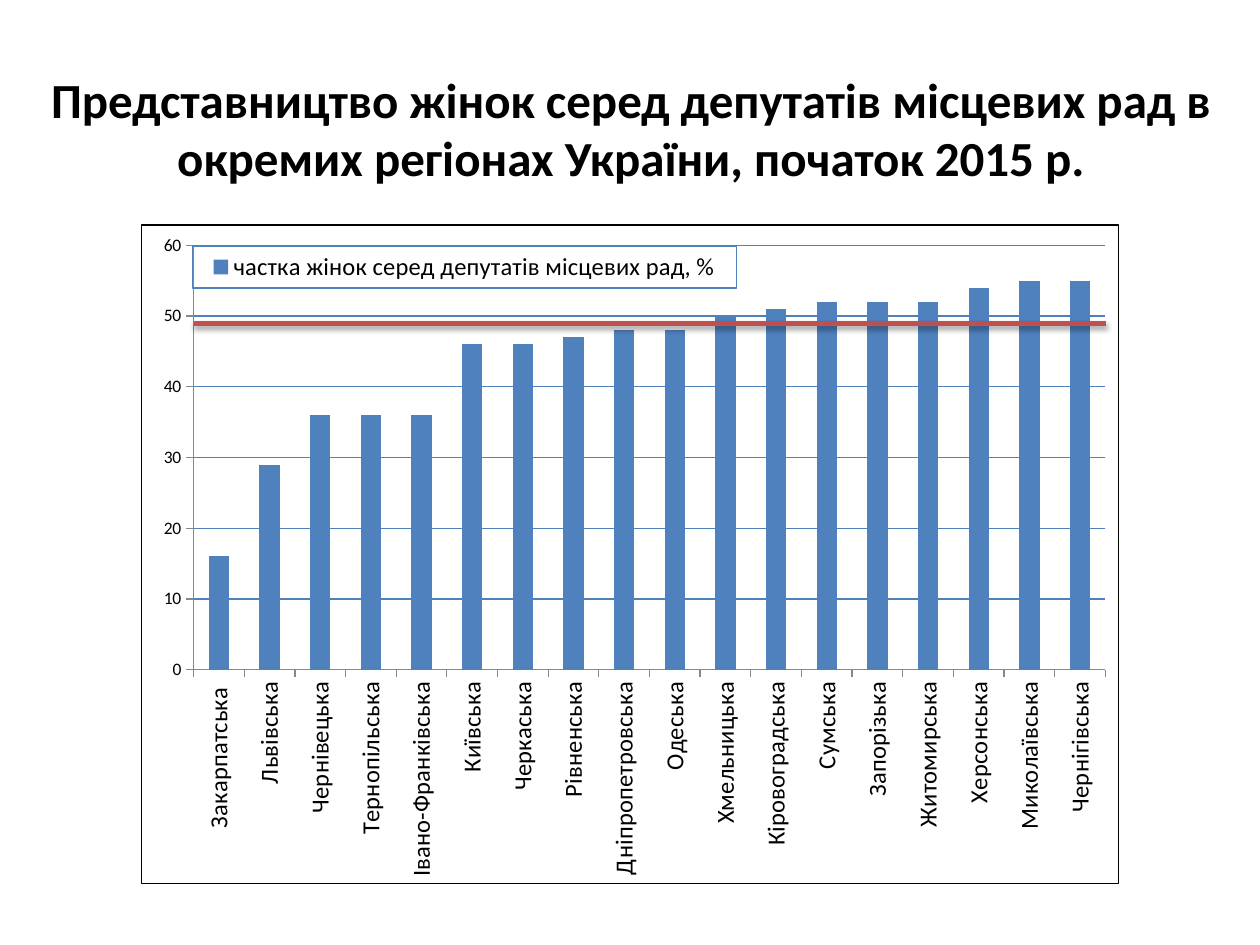
"""Build a slide charting the share of women among local council deputies by region."""
from lxml.etree import fromstring
from pptx import Presentation
from pptx.chart.data import CategoryChartData
from pptx.dml.color import RGBColor
from pptx.enum.chart import XL_CHART_TYPE as ChartType, XL_LEGEND_POSITION as LegendPosition
from pptx.enum.chart import XL_TICK_MARK as TickMark
from pptx.enum.shapes import MSO_CONNECTOR as Connector
from pptx.enum.text import PP_ALIGN as Align
from pptx.oxml.ns import qn
from pptx.util import Inches, Pt

NAMESPACES = (
    'xmlns:a="http://schemas.openxmlformats.org/drawingml/2006/main" '
    'xmlns:c="http://schemas.openxmlformats.org/drawingml/2006/chart"'
)
BLUE, RED, BLACK, GREY = "4F81BD", "C0504D", "000000", "878787"
SERIES_NAME = "частка жінок серед депутатів місцевих рад, %"
SHARES = {
    "Закарпатська ": 16, "Львівська": 29, "Чернівецька": 36,
    "Тернопільська": 36, "Івано-Франківська": 36, "Київська": 46,
    "Черкаська": 46, "Рівненська": 47, "Дніпропетровська": 48,
    "Одеська": 48, "Хмельницька": 50, "Кіровоградська": 51,
    "Сумська": 52, "Запорізька": 52, "Житомирська": 52,
    "Херсонська": 54, "Миколаївська": 55, "Чернігівська": 55,
}


def layout_xml(x, y, width, height, target=""):
    return fromstring(
        f'<c:layout {NAMESPACES}><c:manualLayout>{target}'
        '<c:xMode val="edge"/><c:yMode val="edge"/>'
        f'<c:x val="{x}"/><c:y val="{y}"/><c:w val="{width}"/><c:h val="{height}"/>'
        '</c:manualLayout></c:layout>'
    )


def border_xml(color):
    return fromstring(
        f'<c:spPr {NAMESPACES}><a:noFill/><a:ln w="{Pt(0.75)}"><a:solidFill>'
        f'<a:srgbClr val="{color}"/></a:solidFill></a:ln></c:spPr>'
    )


deck = Presentation()
deck.slide_width, deck.slide_height = Inches(10), Inches(7.5)
page = deck.slides.add_slide(deck.slide_layouts[6])

data = CategoryChartData()
data.categories = list(SHARES)
data.add_series(SERIES_NAME, list(SHARES.values()))
chart = page.shapes.add_chart(
    ChartType.COLUMN_CLUSTERED, Inches(1.12), Inches(1.78), Inches(7.76), Inches(5.24), data
).chart
chart.has_title = False
chart.font.name = "Calibri"
chart.font.size = Pt(10)
chart.font.color.rgb = RGBColor.from_string(BLACK)
chart.font._element.getparent().getparent().getparent().addprevious(border_xml(BLACK))

plot = chart.plots[0]
plot.gap_width = 150
plot.vary_by_categories = False
columns = plot.series[0].format.fill
columns.solid()
columns.fore_color.rgb = RGBColor.from_string(BLUE)

for axis in (chart.category_axis, chart.value_axis):
    axis.major_tick_mark = TickMark.OUTSIDE
    axis.minor_tick_mark = TickMark.NONE
    axis.format.line.color.rgb = RGBColor.from_string(GREY)
    axis.format.line.width = Pt(0.75)
chart.category_axis.tick_labels.font.size = Pt(14)
label_body = chart.category_axis._element.find(qn("c:txPr")).find(qn("a:bodyPr"))
label_body.set("rot", "-5400000")
label_body.set("vert", "horz")
chart.value_axis.minimum_scale, chart.value_axis.maximum_scale = 0, 60
chart.value_axis.major_unit = 10
gridlines = chart.value_axis.major_gridlines.format.line
gridlines.color.rgb = RGBColor.from_string(BLUE)
gridlines.width = Pt(0.75)

chart.has_legend = True
legend = chart.legend
legend.position = LegendPosition.BOTTOM
legend.include_in_layout = True
legend.font.size = Pt(14)
legend_xml = legend._element
for old in legend_xml.findall(qn("c:layout")):
    legend_xml.remove(old)
legend_xml.find(qn("c:legendPos")).addnext(layout_xml(0.052, 0.032, 0.557, 0.064))
legend_xml.find(qn("c:txPr")).addprevious(border_xml(BLUE))

plot_area = plot._element.getparent()
for old in plot_area.findall(qn("c:layout")):
    plot_area.remove(old)
plot_area.insert(0, layout_xml(0.053, 0.031, 0.934, 0.644, '<c:layoutTarget val="inner"/>'))

title = page.shapes.add_textbox(Inches(0.28), Inches(0.5), Inches(9.45), Inches(1.04))
title.text_frame.word_wrap = True
para = title.text_frame.paragraphs[0]
para.text = "Представництво жінок серед депутатів місцевих рад в окремих регіонах України, початок 2015 р."
para.alignment = Align.CENTER
para.font.name = "Calibri"
para.font.size = Pt(28)
para.font.bold = True
para.font.color.rgb = RGBColor.from_string(BLACK)

average = page.shapes.add_connector(
    Connector.STRAIGHT, Inches(1.54), Inches(2.57), Inches(8.78), Inches(2.57)
)
average.line.color.rgb = RGBColor.from_string(RED)
average.line.width = Pt(3)
average._element.spPr.append(fromstring(
    f'<a:effectLst {NAMESPACES}><a:outerShdw blurRad="{Pt(3.1)}" dist="{Pt(1.8)}" dir="5400000" '
    f'rotWithShape="0"><a:srgbClr val="{BLACK}"><a:alpha val="35000"/></a:srgbClr>'
    '</a:outerShdw></a:effectLst>'
))

deck.save("out.pptx")
